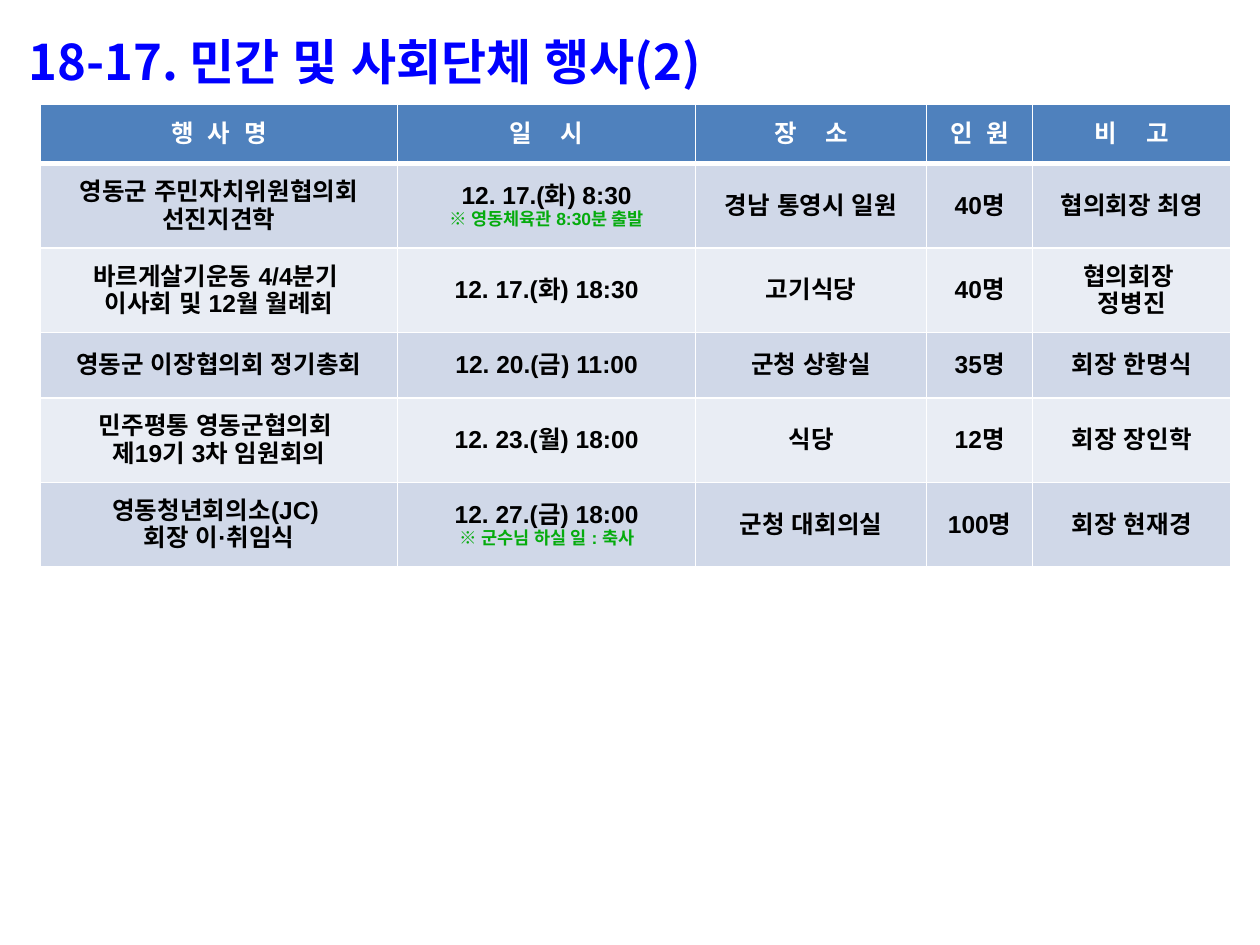
import pptx
import pptx.util
import pptx.dml.color
import pptx.enum.lang
import pptx.enum.text
import pptx.oxml.ns
import lxml.etree

RGBColor = pptx.dml.color.RGBColor
BLUE = RGBColor(0x00, 0x00, 0xFF)
WHITE = RGBColor(0xFF, 0xFF, 0xFF)
BLACK = RGBColor(0x00, 0x00, 0x00)
GREEN = RGBColor(0x05, 0xAB, 0x0D)
HEADER_FILL = RGBColor(0x4F, 0x81, 0xBD)
BAND_FILLS = (RGBColor(0xD0, 0xD8, 0xE8), RGBColor(0xE9, 0xED, 0xF4))

Pt = pptx.util.Pt
EAST_ASIAN_FONT = "Arial"
KOREAN = pptx.enum.lang.MSO_LANGUAGE_ID.KOREAN
TITLE_FORMAT = {"name": "Noto Sans CJK KR", "size": Pt(28), "bold": True, "language_id": KOREAN}
TABLE_FORMAT = {"name": "Arial", "size": Pt(14), "bold": True, "language_id": KOREAN}
NOTE_FORMAT = {**TABLE_FORMAT, "size": Pt(10)}
BODY_BORDERS = {"lnL": 1, "lnR": 1, "lnT": 1, "lnB": 1}
HEADER_BORDERS = {**BODY_BORDERS, "lnB": 3}
FIRST_ROW_BORDERS = {**BODY_BORDERS, "lnT": 3}

COLUMN_WIDTHS = (2.83, 2.36, 1.83, 0.84, 1.57)
ROW_HEIGHTS = (0.47, 0.67, 0.67, 0.52, 0.67, 0.67)
HEADERS = (("행 사 명", 2), ("일 시", 6.2), ("장 소", 6.2), ("인 원", 2), ("비 고", 6.2))
EVENTS = (
    ("영동군 주민자치위원협의회\n선진지견학", "12. 17.(화) 8:30\n※ 영동체육관 8:30분 출발",
     "경남 통영시 일원", "40명", "협의회장 최영"),
    ("바르게살기운동 4/4분기 \n이사회 및 12월 월례회", "12. 17.(화) 18:30",
     "고기식당", "40명", "협의회장 \n정병진"),
    ("영동군 이장협의회 정기총회", "12. 20.(금) 11:00",
     "군청 상황실", "35명", "회장 한명식"),
    ("민주평통 영동군협의회 \n제19기 3차 임원회의", "12. 23.(월) 18:00",
     "식당", "12명", "회장 장인학"),
    ("영동청년회의소(JC) \n회장 이·취임식", "12. 27.(금) 18:00\n※ 군수님 하실 일 : 축사",
     "군청 대회의실", "100명", "회장 현재경"),
)


def add_child(parent, tag, **attributes):
    return lxml.etree.SubElement(parent, pptx.oxml.ns.qn(tag), attributes)


def add_run(paragraph, text, font_format, color):
    run = paragraph.add_run()
    run.text = text
    for name, value in font_format.items():
        setattr(run.font, name, value)
    run.font.color.rgb = color
    add_child(run._r.get_or_add_rPr(), "a:ea", typeface=EAST_ASIAN_FONT)
    return run


def add_title(slide, box, text):
    frame = slide.shapes.add_textbox(*box).text_frame
    frame.word_wrap = True
    frame.margin_left = pptx.util.Inches(0.19)
    paragraph = frame.paragraphs[0]
    paragraph.line_spacing = 1.5
    add_run(paragraph, text, TITLE_FORMAT, BLUE)


def fill_cell(cell, text, fill, color, borders, spacing=0):
    cell.vertical_anchor = pptx.enum.text.MSO_ANCHOR.MIDDLE
    for side, width in borders.items():
        line = add_child(cell._tc.get_or_add_tcPr(), "a:" + side, w=str(Pt(width)))
        add_child(add_child(line, "a:solidFill"), "a:srgbClr", val=str(WHITE))
    cell.fill.solid()
    cell.fill.fore_color.rgb = fill
    frame = cell.text_frame
    for index, line in enumerate(text.split("\n")):
        paragraph = frame.add_paragraph() if index else frame.paragraphs[0]
        paragraph.alignment = pptx.enum.text.PP_ALIGN.CENTER
        is_note = line.startswith("※")
        run = add_run(paragraph, line, NOTE_FORMAT if is_note else TABLE_FORMAT,
                      GREEN if is_note else color)
        if spacing:
            run._r.get_or_add_rPr().set("spc", str(round(spacing * 100)))


def add_event_table(slide, box):
    left, top, width, height = box
    table = slide.shapes.add_table(len(ROW_HEIGHTS), len(COLUMN_WIDTHS), *box).table
    for column, share in zip(table.columns, COLUMN_WIDTHS):
        column.width = round(width * share / sum(COLUMN_WIDTHS))
    for row, share in zip(table.rows, ROW_HEIGHTS):
        row.height = round(height * share / sum(ROW_HEIGHTS))
    for cell, (text, spacing) in zip(table.rows[0].cells, HEADERS):
        fill_cell(cell, text, HEADER_FILL, WHITE, HEADER_BORDERS, spacing)
    for index, event in enumerate(EVENTS):
        borders = BODY_BORDERS if index else FIRST_ROW_BORDERS
        for cell, text in zip(table.rows[index + 1].cells, event):
            fill_cell(cell, text, BAND_FILLS[index % 2], BLACK, borders)


def main():
    presentation = pptx.Presentation()
    inches = pptx.util.Inches
    presentation.slide_width = inches(10)
    presentation.slide_height = inches(7.5)
    slide = presentation.slides.add_slide(presentation.slide_layouts[6])
    add_title(slide, [inches(n) for n in (0.04, -0.03, 10, 6.25)],
              "18-17. 민간 및 사회단체 행사(2)")
    add_event_table(slide, [inches(n) for n in (0.32, 0.83, 9.45, sum(ROW_HEIGHTS))])
    presentation.save("out.pptx")


if __name__ == "__main__":
    main()
